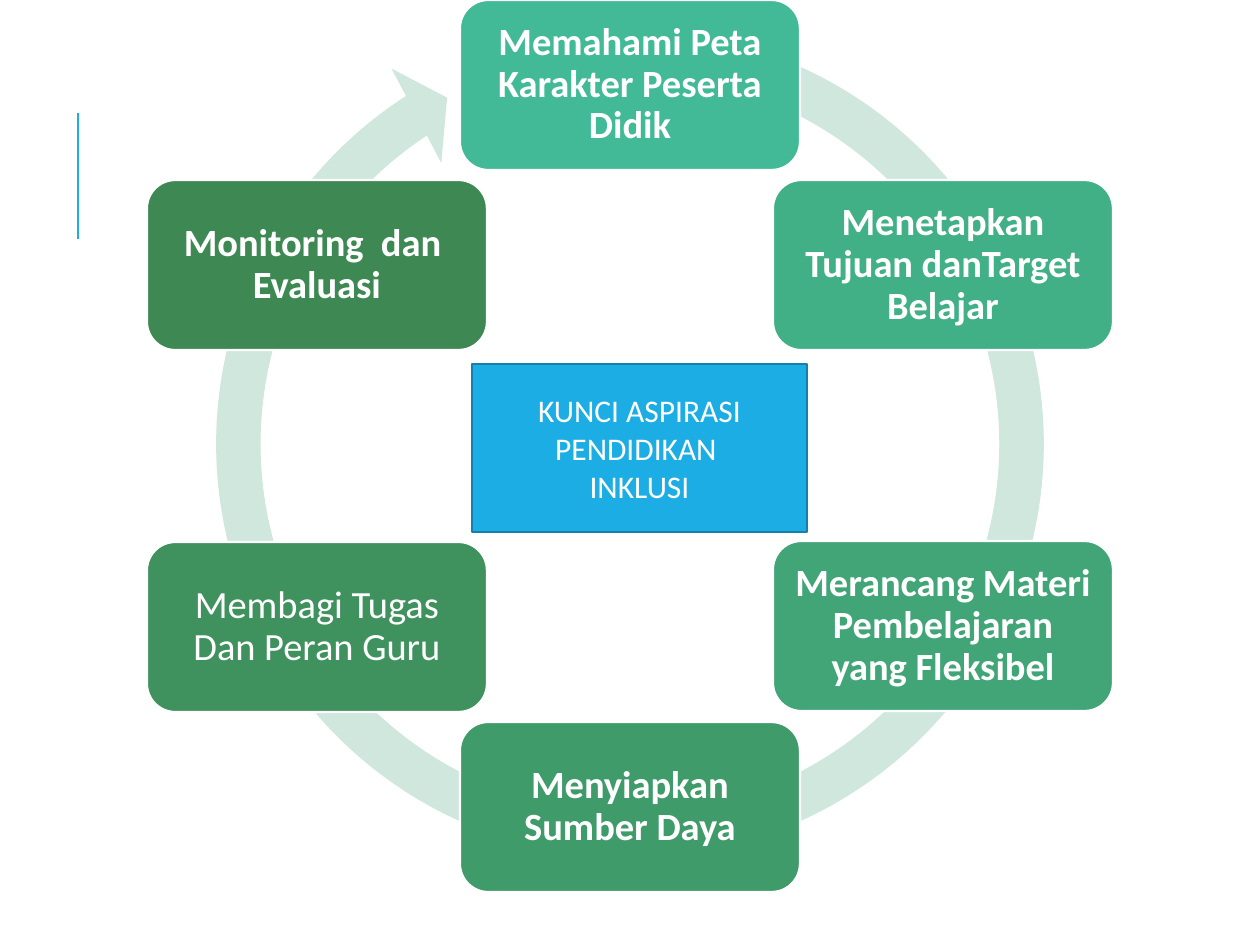
import dataclasses
import math
import pptx
import pptx.dml.color
import pptx.enum.shapes
import pptx.enum.text
import pptx.oxml.ns
import pptx.util
from lxml import etree

SCALE = 914400 / 126
KIND = pptx.enum.shapes.MSO_SHAPE


@dataclasses.dataclass
class Step:
    text: str
    fill: str
    bold: bool = True


STEPS = [
    Step("Memahami Peta Karakter Peserta Didik", "42BA97"),
    Step("Menetapkan Tujuan danTarget Belajar", "42B086"),
    Step("Merancang Materi Pembelajaran yang Fleksibel", "41A577"),
    Step("Menyiapkan Sumber Daya", "409B6A"),
    Step("Membagi Tugas Dan Peran Guru", "3F925E", False),
    Step("Monitoring  dan  Evaluasi", "3E8853"),
]
MID_X, MID_Y, RADIUS = 630, 446, 361
WIDE, HIGH = 340, 170


def px(size: float) -> int:
    return round(size * SCALE)


def tint(code: str) -> pptx.dml.color.RGBColor:
    return pptx.dml.color.RGBColor.from_string(code)


def apply(target, values: dict) -> None:
    for name, value in values.items():
        setattr(target, name, value)


def add_box(slide, kind, left: int, top: int, wide: int, high: int, fill: str, edge: str = ""):
    box = slide.shapes.add_shape(kind, px(left), px(top), px(wide), px(high))
    box.shadow.inherit = False
    box.fill.solid()
    box.fill.fore_color.rgb = tint(fill)
    if edge:
        box.line.color.rgb = tint(edge)
        box.line.width = pptx.util.Pt(1.25)
    else:
        box.line.fill.background()
    return box


def add_text(box, text: str, size: int, bold: bool, space: float, inset: int) -> None:
    frame = box.text_frame
    apply(frame, {
        "text": text,
        "word_wrap": True,
        "vertical_anchor": pptx.enum.text.MSO_ANCHOR.MIDDLE,
        "margin_left": px(inset),
        "margin_right": px(inset),
    })
    for para in frame.paragraphs:
        apply(para, {"alignment": pptx.enum.text.PP_ALIGN.CENTER, "line_spacing": space})
        for run in para.runs:
            apply(run.font, {"name": "Calibri", "size": pptx.util.Pt(size), "bold": bold})
            run.font.color.rgb = tint("FFFFFF")


def add_rule(slide, left: int, start: int, end: int) -> None:
    rule = slide.shapes.add_connector(
        pptx.enum.shapes.MSO_CONNECTOR.STRAIGHT, px(left), px(start), px(left), px(end))
    rule.line.color.rgb = tint("1CADE4")
    rule.line.width = pptx.util.Pt(1.5)
    etree.SubElement(rule._element.spPr, pptx.oxml.ns.qn("a:effectLst"))


def add_ring(slide) -> None:
    ring = add_box(slide, KIND.CIRCULAR_ARROW, 185, -1, 890, 890, "CFE7DD")
    for index, value in enumerate((0.05, 3.13, 142.17, 171.34, 0.06)):
        ring.adjustments[index] = value


def add_step(slide, index: int, step: Step) -> None:
    angle = math.tau * index / len(STEPS)
    left = round(MID_X + RADIUS * math.sin(angle) - WIDE / 2)
    top = round(MID_Y - RADIUS * math.cos(angle) - HIGH / 2)
    box = add_box(slide, KIND.ROUNDED_RECTANGLE, left, top, WIDE, HIGH, step.fill, "FFFFFF")
    add_text(box, step.text, 22, step.bold, 0.9, 11)


def main() -> None:
    deck = pptx.Presentation()
    apply(deck, {"slide_width": px(1260), "slide_height": px(945)})
    slide = deck.slides.add_slide(deck.slide_layouts[6])
    add_rule(slide, 78, 239, 113)
    add_ring(slide)
    for index, step in enumerate(STEPS):
        add_step(slide, index, step)
    core = add_box(slide, KIND.RECTANGLE, 472, 364, 335, 168, "1CADE4", "1580A9")
    add_text(core, "KUNCI ASPIRASI\nPENDIDIKAN \vINKLUSI", 18, False, 1.0, 13)
    deck.save("out.pptx")


if __name__ == "__main__":
    main()
